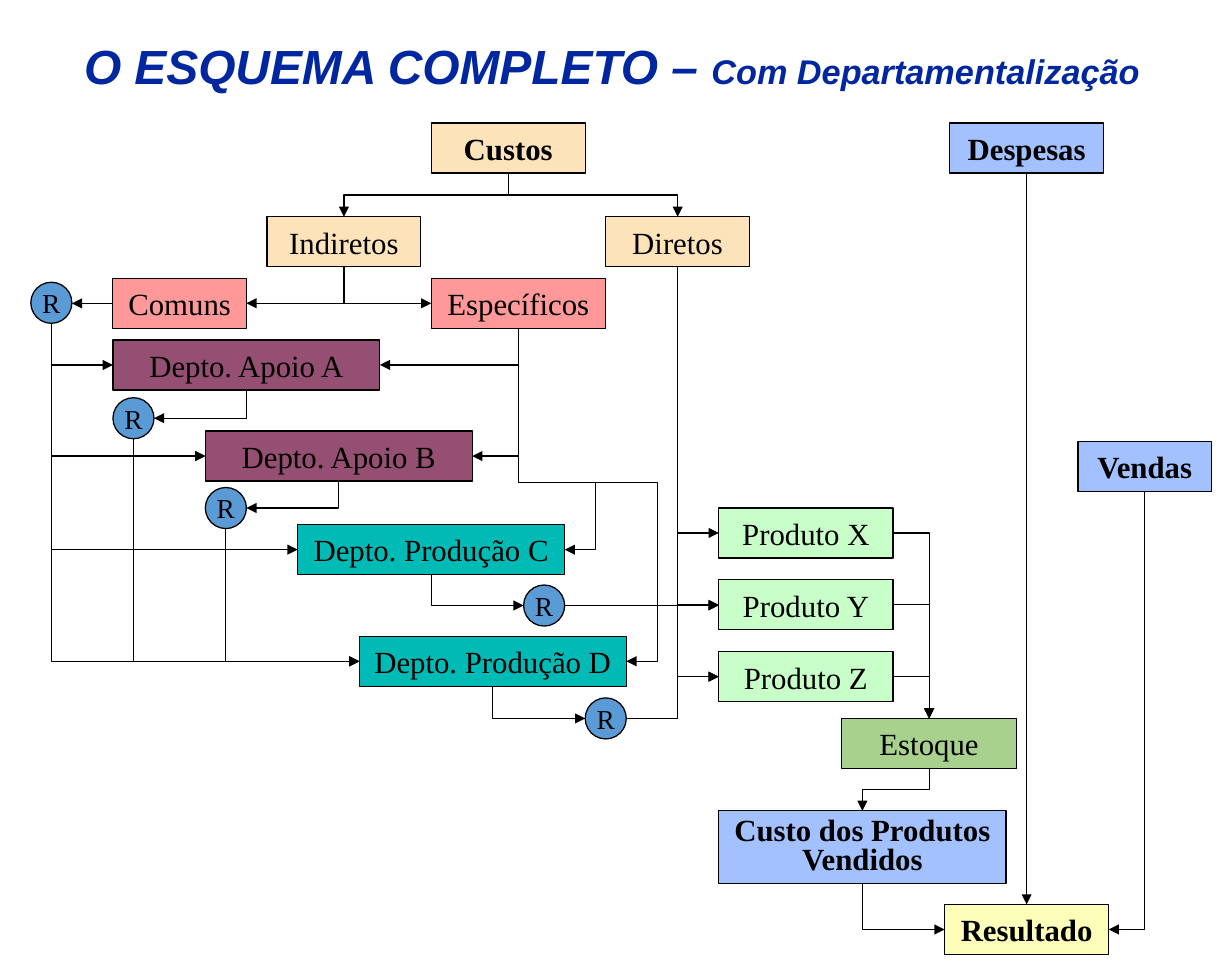
from lxml.etree import SubElement
from pptx import Presentation
from pptx.dml.color import RGBColor
from pptx.enum.shapes import MSO_CONNECTOR, MSO_SHAPE
from pptx.enum.text import MSO_ANCHOR, PP_ALIGN
from pptx.oxml.ns import qn
from pptx.util import Pt

PX = 9525
COLORS = {
    "title": "00279F", "ink": "000000", "cost": "FDE3BA", "type": "FF9999",
    "support": "954F72", "production": "00BAB6", "share": "5B9BD5",
    "product": "C8FEC8", "stock": "A9D18E", "sales": "A2C1FE", "result": "FCFEB9",
}
ROW = 39
DOT = 32


def emu(*values):
    """Turn px lengths into whole EMU."""
    return [round(v * PX) for v in values]


def rgb(name):
    """Look up a named colour."""
    return RGBColor.from_string(COLORS[name])


def node(s, box, text, color, bold=False, kind=MSO_SHAPE.RECTANGLE, size=18):
    """Draw a labelled shape and return its box."""
    sp = s.shapes.add_shape(kind, *emu(*box))
    sp.shadow.inherit = False
    sp.fill.solid()
    sp.fill.fore_color.rgb = rgb(color)
    sp.line.color.rgb = rgb("ink")
    sp.line.width = Pt(0.75)
    tf = sp.text_frame
    tf.word_wrap = kind == MSO_SHAPE.RECTANGLE
    tf.vertical_anchor = MSO_ANCHOR.MIDDLE
    p = tf.paragraphs[0]
    p.text = text
    p.alignment = PP_ALIGN.CENTER
    p.font.name = "Times New Roman"
    p.font.size = Pt(size)
    p.font.bold = bold
    p.font.color.rgb = rgb("ink")
    if box[3] > ROW:
        p.line_spacing = 0.8
    return box


def share(s, x, y):
    """Draw an apportionment circle and return its box."""
    return node(s, (x, y, DOT, DOT), "R", "share",
                kind=MSO_SHAPE.FLOWCHART_CONNECTOR, size=16)


def side(box, edge):
    """Return the middle point of one edge of a box."""
    x, y, w, h = box
    return {"t": (x + w / 2, y), "b": (x + w / 2, y + h),
            "l": (x, y + h / 2), "r": (x + w, y + h / 2)}[edge]


def link(s, start, end, down, bends):
    """Draw an arrow, straight or bent, leaving downwards or sideways."""
    (x1, y1), (x2, y2) = start, end
    kind = MSO_CONNECTOR.STRAIGHT if bends is None else MSO_CONNECTOR.ELBOW
    turned = down and bends is not None
    turn = 1 if x2 < x1 else -1
    if abs(y2 - y1) < 1:
        y2 = y1
    if turned:
        cx, cy = (x1 + x2) / 2, (y1 + y2) / 2
        dx, dy = turn * (x2 - x1) / 2, turn * (y2 - y1) / 2
        x1, y1, x2, y2 = cx - dy, cy + dx, cx + dy, cy - dx
    c = s.shapes.add_connector(kind, *emu(x1, y1, x2, y2))
    c.line.color.rgb = rgb("ink")
    c.line.width = Pt(0.75)
    spPr = c._element.spPr
    SubElement(c.line._get_or_add_ln(), qn("a:tailEnd"), type="triangle")
    SubElement(spPr, qn("a:effectLst"))
    if turned:
        spPr.find(qn("a:xfrm")).set("rot", str(5400000 if turn > 0 else 16200000))
    if bends is not None:
        geom = spPr.find(qn("a:prstGeom"))
        geom.set("prst", f"bentConnector{2 + len(bends)}")
        guides = geom.find(qn("a:avLst"))
        for i, bend in enumerate(bends, 1):
            SubElement(guides, qn("a:gd"), name=f"adj{i}", fmla=f"val {round(bend * 100000)}")


def title(s, x, y, w, h):
    """Write the heading in two sizes."""
    tf = s.shapes.add_textbox(*emu(x, y, w, h)).text_frame
    tf.word_wrap = True
    tf.vertical_anchor = MSO_ANCHOR.MIDDLE
    p = tf.paragraphs[0]
    p.font.name = "Arial"
    p.font.bold = p.font.italic = True
    p.font.color.rgb = rgb("title")
    for text, size in (("O ESQUEMA COMPLETO – ", 28), ("Com Departamentalização", 20)):
        r = p.add_run()
        r.text = text
        r.font.size = Pt(size)


def costs(s, x, y):
    """Draw the tree of cost types."""
    return {
        "Custos": node(s, (x + 312, y, 120, ROW), "Custos", "cost", True),
        "Indiretos": node(s, (x + 184, y + 73, 120, ROW), "Indiretos", "cost"),
        "Diretos": node(s, (x + 448, y + 73, 112, ROW), "Diretos", "cost"),
        "Comuns": node(s, (x + 64, y + 121, 104, ROW), "Comuns", "type"),
        "Específicos": node(s, (x + 312, y + 121, 136, ROW), "Específicos", "type"),
        "R": share(s, x, y + 124),
    }


def departments(s, x, y):
    """Draw the staircase of departments with their apportionment circles."""
    steps = (("Apoio A", "support", 0, 0, 0, 45), ("Apoio B", "support", 72, 71, 72, 115),
             ("Produção C", "production", 144, 144, 320, 191),
             ("Produção D", "production", 192, 231, 368, 279))
    boxes = {}
    for name, color, dx, dy, rx, ry in steps:
        key = name[-1]
        boxes[key] = node(s, (x + dx, y + dy, 208, ROW), f"Depto. {name}", color)
        boxes["R" + key] = share(s, x + rx, y + ry)
    return boxes


def products(s, x, y):
    """Draw the column of products."""
    return {k: node(s, (x, y + i * 56, 136, ROW), f"Produto {k}", "product")
            for i, k in enumerate("XYZ")}


def results(s, x, y):
    """Draw stock, cost of sales, expenses, sales and the result."""
    return {
        "Despesas": node(s, (x + 180, y, 120, ROW), "Despesas", "sales", True),
        "Vendas": node(s, (x + 280, y + 248, 104, ROW), "Vendas", "sales", True),
        "Estoque": node(s, (x + 96, y + 464, 136, ROW), "Estoque", "stock"),
        "CPV": node(s, (x, y + 536, 224, 57), "Custo dos Produtos Vendidos", "sales", True),
        "Resultado": node(s, (x + 176, y + 609, 128, ROW), "Resultado", "result", True),
    }


def links(s, boxes):
    """Join the boxes with arrows."""
    groups = (
        ("Custos", "b", "t", ("Indiretos", "Diretos"), (0.5,)),
        ("Indiretos", "b", "r", ("Comuns",), ()),
        ("Indiretos", "b", "l", ("Específicos",), ()),
        ("Comuns", "l", "r", ("R",), None),
        ("R", "b", "l", "ABCD", ()),
        ("Específicos", "b", "r", "AB", ()),
        ("Específicos", "b", "r", "C", (120 / 172.5, 5 / 3)),
        ("Específicos", "b", "r", "D", (120 / 259.5, 9 / 7)),
        ("A", "b", "r", ("RA",), ()),
        ("B", "b", "r", ("RB",), ()),
        ("C", "b", "l", ("RC",), ()),
        ("D", "b", "l", ("RD",), ()),
        ("RA", "b", "l", "BD", ()),
        ("RB", "b", "l", "D", ()),
        ("RC", "r", "l", "Y", None),
        ("RD", "r", "l", "Z", (5 / 9,)),
        ("Diretos", "b", "l", "XYZ", ()),
        *((k, "r", "t", ("Estoque",), ()) for k in "XYZ"),
        ("Estoque", "b", "t", ("CPV",), (0.5,)),
        ("CPV", "b", "l", ("Resultado",), ()),
        ("Despesas", "b", "t", ("Resultado",), None),
        ("Vendas", "b", "r", ("Resultado",), ()),
    )
    for source, out, into, targets, bends in groups:
        for target in targets:
            link(s, side(boxes[source], out), side(boxes[target], into), out == "b", bends)


def main():
    """Build the slide and save it."""
    prs = Presentation()
    prs.slide_width, prs.slide_height = emu(960, 760)
    s = prs.slides.add_slide(prs.slide_layouts[6])
    title(s, 56, 24, 852, 54)
    boxes = {**costs(s, 24, 96), **departments(s, 88, 265),
             **products(s, 560, 396), **results(s, 560, 96)}
    links(s, boxes)
    prs.save("out.pptx")


if __name__ == "__main__":
    main()
